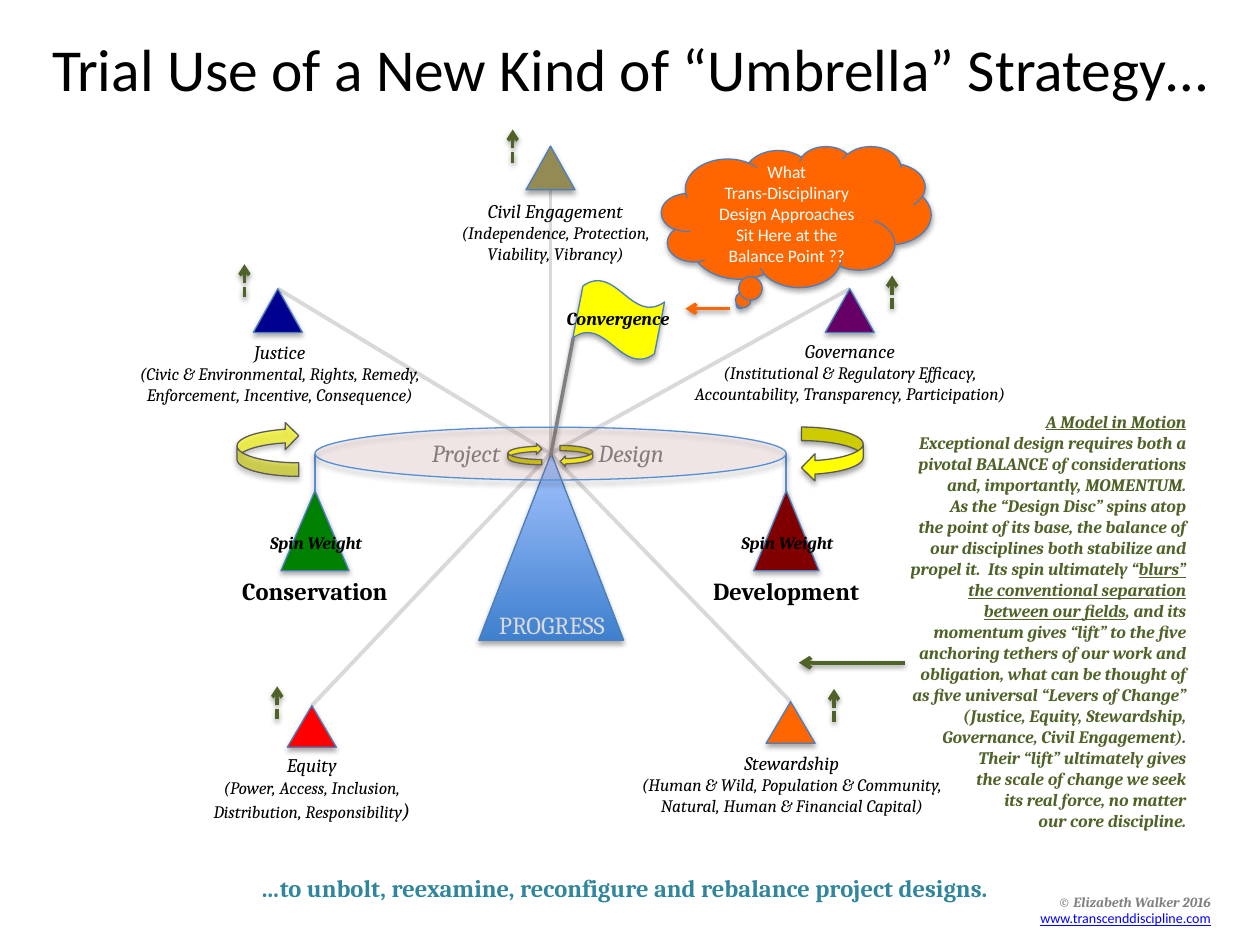
from lxml.etree import SubElement
from pptx import Presentation
from pptx.dml.color import RGBColor
from pptx.enum.dml import MSO_LINE
from pptx.enum.shapes import MSO_CONNECTOR, MSO_SHAPE
from pptx.enum.text import MSO_ANCHOR, PP_ALIGN
from pptx.oxml.ns import qn
from pptx.util import Pt

HUB = (314.6, 259.2)
BLUE, GRAY, OLIVE, ORANGE = "4B7EBC", "808080", "4F6228", "FF6600"
SMALL = {"size": 10}
UNDER = {"underline": True}

# name, detail lines, colour, apex, triangle height, text box, lift arrow (x, bottom)
LEVERS = [
    ("Civil Engagement", ["(Independence, Protection,", "Viability, Vibrancy)"],
     "948A54", (314.6, 83.5), 25, (252.7, 110.2, 129.6, 55.4), (293, 92.9)),
    ("Governance", ["(Institutional & Regulatory Efficacy, Accountability, "
                    "Transparency, Participation)"],
     "660066", (485.6, 165), 25, (376.6, 190.1, 218.2, 55.4), (509.8, 176.4)),
    ("Justice", ["(Civic & Environmental, Rights, Remedy, "
                 "Enforcement, Incentive, Consequence)"],
     "000090", (158.8, 165), 25, (67.7, 190.8, 184.3, 55.4), (139.7, 169.9)),
    ("Equity", ["(Power, Access, Inclusion,", "Distribution, Responsibility"],
     "FF0000", (178.2, 403.2), 23.8, (89.3, 427, 177.8, 43.9), (158.4, 411.1)),
    ("Stewardship", ["(Human & Wild, Population & Community,",
                     "Natural, Human & Financial Capital)"],
     ORANGE, (451.8, 401), 23.8, (334.8, 425.5, 235.4, 55.4), (476.6, 412.6)),
]

MODEL_TEXT = [
    [("A Model in Motion", UNDER)],
    [("Exceptional design requires both a pivotal BALANCE of considerations "
      "and, importantly, MOMENTUM.", {})],
    [("As the “Design Disc” spins atop", {})],
    [("the point of its base, the balance of our disciplines both stabilize and "
      "propel it.  Its spin ultimately “", {}),
     ("blurs” the conventional separation", UNDER)],
    [("between our fields", UNDER),
     (", and its momentum gives “lift” to the five anchoring tethers of our work "
      "and obligation, what can be thought of as five universal "
      "“Levers of Change”", {})],
    [("(Justice, Equity, Stewardship, Governance, Civil Engagement).", {})],
    [("Their “lift” ultimately gives", {})],
    [("the scale of change we seek", {})],
    [("its real force, no matter", {})],
    [("our core discipline.", {})],
]


def rgb(value):
    return RGBColor.from_string(value)


def set_effects(shape, blur=0, dist=0, alpha=0):
    """Replace the theme shadow with a given one, or with none."""
    effects = SubElement(shape._element.spPr, qn("a:effectLst"))
    if alpha:
        shadow = SubElement(effects, qn("a:outerShdw"), blurRad=str(Pt(blur)),
                            dist=str(Pt(dist)), dir="5400000", rotWithShape="0")
        color = SubElement(shadow, qn("a:srgbClr"), val="000000")
        SubElement(color, qn("a:alpha"), val=str(alpha * 1000))


def write(tf, paragraphs, align=PP_ALIGN.CENTER, **base):
    """Fill a text frame; each paragraph is a list of (text, format changes)."""
    tf.word_wrap = True
    for i, runs in enumerate(paragraphs):
        p = tf.paragraphs[0] if i == 0 else tf.add_paragraph()
        p.alignment = align
        for text, changes in runs:
            r = p.add_run()
            r.text = text
            fmt = {"name": "Cambria", "color": "000000", **base, **changes}
            r.font.color.rgb = rgb(fmt.pop("color"))
            fmt["size"] = Pt(fmt["size"])
            for key, value in fmt.items():
                setattr(r.font, key, value)


def add_text(s, box, paragraphs, anchor=MSO_ANCHOR.TOP, **fmt):
    tf = s.shapes.add_textbox(*map(Pt, box)).text_frame
    tf.vertical_anchor = anchor
    write(tf, paragraphs, **fmt)


def add_label(s, box, text, **fmt):
    add_text(s, box, [[(text, {})]], **fmt)


def add_line(s, start, end, color, width, dash=None, arrow=False, shadow=True):
    c = s.shapes.add_connector(MSO_CONNECTOR.STRAIGHT, *map(Pt, start + end))
    c.line.color.rgb = rgb(color)
    c.line.width = Pt(width)
    if dash:
        c.line.dash_style = dash
    if arrow:
        SubElement(c.line._get_or_add_ln(), qn("a:tailEnd"), type="arrow")
    if shadow:
        set_effects(c, 3.1, 1.6, 38)
    else:
        set_effects(c)


def add_figure(s, kind, box, fill, line=BLUE, rotation=0, alpha=None):
    sp = s.shapes.add_shape(kind, *map(Pt, box))
    sp.rotation = rotation
    if isinstance(fill, str):
        sp.fill.solid()
        sp.fill.fore_color.rgb = rgb(fill)
    else:
        sp.fill.gradient()
        sp.fill.gradient_angle = 90
        for stop, color in zip(sp.fill.gradient_stops, fill):
            stop.color.rgb = rgb(color)
    if alpha:
        color = sp._element.spPr.find(qn("a:solidFill"))[0]
        SubElement(color, qn("a:alpha"), val=str(alpha * 1000))
    sp.line.color.rgb = rgb(line)
    sp.line.width = Pt(0.75)
    set_effects(sp, 3.1, 1.8, 35)
    return sp


def add_spin_arrow(s, kind, box, rotation, alpha=None):
    add_figure(s, kind, box, "FFFF00", "595959", rotation, alpha)


def add_levers(s):
    for *_, (x, bottom) in LEVERS:
        add_line(s, (x, bottom), (x, bottom - 18.9), OLIVE, 2,
                 MSO_LINE.SQUARE_DOT, arrow=True)
    for _, _, _, apex, *_ in LEVERS:
        add_line(s, HUB, apex, "D9D9D9", 2.25, shadow=False)
    for name, details, color, (x, y), height, box, _ in LEVERS:
        add_figure(s, MSO_SHAPE.ISOSCELES_TRIANGLE, (x - 14, y, 28, height), color)
        paragraphs = [[(name, {})]] + [[(text, SMALL)] for text in details]
        if name == "Equity":
            paragraphs[-1].append((")", {"size": 12}))
        add_text(s, box, paragraphs, size=11, italic=True)


def add_spin_weight(s, name, x, color, width):
    add_figure(s, MSO_SHAPE.ISOSCELES_TRIANGLE, (x - width / 2, 280.5, width, 45.7),
               color)
    add_label(s, (x - 66.5, 325.4, 133, 30.2), name, size=14, bold=True)
    add_label(s, (x - 53, 300.2, 107, 17.6), "Spin Weight", size=10, bold=True,
              italic=True)


def add_callout(s):
    cloud = add_figure(s, MSO_SHAPE.CLOUD_CALLOUT, (378, 83.5, 154.1, 80.6), ORANGE)
    cloud.text_frame.vertical_anchor = MSO_ANCHOR.MIDDLE
    write(cloud.text_frame,
          [[("What", {})], [("Trans-Disciplinary Design Approaches Sit Here at the "
                             "Balance Point ??", {})]],
          size=10, name="Calibri", color="FFFFFF")
    add_line(s, (416.9, 176.4), (391.7, 176.4), ORANGE, 2, arrow=True)


def add_balance(s):
    add_figure(s, MSO_SHAPE.ISOSCELES_TRIANGLE, (273.6, 259.2, 82.8, 106.6),
               ("3F80CE", "A4C4FF"))
    add_figure(s, MSO_SHAPE.WAVE, (329.8, 162.7, 47.5, 40.3), "FFFF00", rotation=11.1)
    add_spin_weight(s, "Development", 449.3, "800000", 37.4)
    add_spin_weight(s, "Conservation", 180, "008000", 38.9)
    add_spin_arrow(s, MSO_SHAPE.CURVED_LEFT_ARROW, (135.4, 241.2, 35.3, 31), 180, 61)
    add_label(s, (272.9, 344.9, 85, 24.5), "PROGRESS", size=14, color="D9D9D9")
    add_spin_arrow(s, MSO_SHAPE.CURVED_DOWN_ARROW, (460.1, 241.9, 31, 35.3), 90)
    add_label(s, (309.6, 172.1, 87.1, 20.9), "Convergence", size=10.5, bold=True,
              italic=True)
    add_line(s, (327.6, 193), (314.6, 260.6), GRAY, 2)
    add_figure(s, MSO_SHAPE.OVAL, (180, 244.1, 269.3, 30.2), "D99694", "558ED5",
               alpha=14)


def main():
    prs = Presentation()
    prs.slide_width, prs.slide_height = Pt(720), Pt(540)
    s = prs.slides.add_slide(prs.slide_layouts[6])

    for x, bottom in ((180, 280.8), (449.3, 308.9)):
        add_line(s, (x, 259.2), (x, bottom), "558ED5", 1)
    for x, word in ((207.4, "Project"), (301.7, "Design")):
        add_label(s, (x, 247, 118.1, 24.5), word, size=14, italic=True, color=GRAY)
    add_text(s, (509.8, 231.1, 175, 272.9), MODEL_TEXT, align=PP_ALIGN.RIGHT,
             size=10, bold=True, italic=True, color=OLIVE)
    add_line(s, (517, 378.7), (456.5, 378.7), OLIVE, 2.25, arrow=True)
    add_levers(s)
    add_spin_arrow(s, MSO_SHAPE.CURVED_LEFT_ARROW, (290.2, 253.4, 19.4, 12.2), 180)
    add_spin_arrow(s, MSO_SHAPE.CURVED_DOWN_ARROW, (323.3, 251.3, 12.2, 18.7), 90)
    add_callout(s)
    add_balance(s)

    add_label(s, (33, 492, 648, 30),
              "…to unbolt, reexamine, reconfigure and rebalance project designs.",
              anchor=MSO_ANCHOR.MIDDLE, size=14, bold=True, color="31859C")
    add_label(s, (0, 13, 720, 51.1), "Trial Use of a New Kind of “Umbrella” Strategy…",
              anchor=MSO_ANCHOR.MIDDLE, size=34, name="Calibri")
    add_text(s, (585.4, 506.9, 113.8, 23.8),
             [[("© Elizabeth Walker 2016", {"bold": True, "italic": True})],
              [("www.transcenddiscipline.com",
                {"name": "Calibri", "color": "0000FF", **UNDER})]],
             align=PP_ALIGN.RIGHT, size=8, color=GRAY)
    prs.save("out.pptx")


if __name__ == "__main__":
    main()
